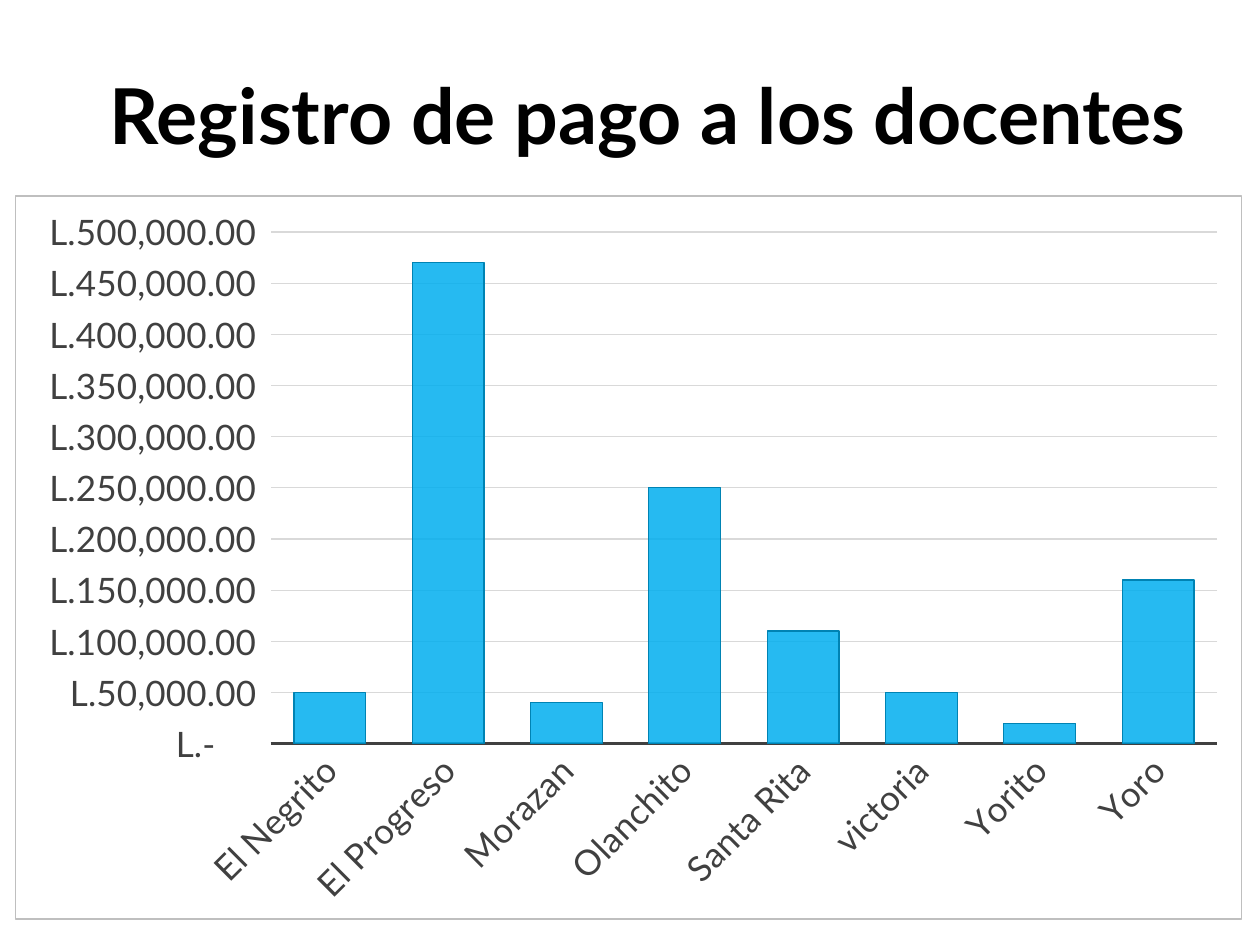
from lxml import etree
from pptx import Presentation
from pptx.chart.data import CategoryChartData
from pptx.dml.color import RGBColor
from pptx.enum import chart as ch, text as tx
from pptx.oxml import parse_xml
from pptx.oxml.ns import nsdecls, qn
from pptx.util import Pt

FONT = "Lato"
PAY = {
    "El Negrito": 50000, "El Progreso": 470000, "Morazan": 40000,
    "Olanchito": 250000, "Santa Rita": 110000, "victoria": 50000,
    "Yorito": 20000, "Yoro": 160000,
}
MONEY = r'_("L."* #,##0.00_);_("L."* \(#,##0.00\);_("L."* "-"??_);_(@_)'


def rgb(code):
    return RGBColor.from_string(code)


def style(font, size, color, bold=False):
    font.name, font.size, font.bold = FONT, Pt(size), bold
    font.color.rgb = rgb(color)


def stroke(line, color, width):
    line.color.rgb = rgb(color)
    line.width = Pt(width)


def label(slide, words, box, size=20, color="000000", bold=False, space=1.0):
    frame = slide.shapes.add_textbox(*map(Pt, box)).text_frame
    frame.word_wrap = True
    frame.vertical_anchor = tx.MSO_ANCHOR.BOTTOM
    para = frame.paragraphs[0]
    para.alignment = tx.PP_ALIGN.CENTER
    para.line_spacing = space
    run = para.add_run()
    run.text = words
    style(run.font, size, color, bold)


def frame_chart(chart, color, width):
    # The outer border goes right after the c:chart element
    root = chart._chartSpace
    root.find(qn("c:chart")).addnext(parse_xml(
        f'<c:spPr {nsdecls("c", "a")}><a:noFill/><a:ln w="{Pt(width)}">'
        f'<a:solidFill><a:srgbClr val="{color}"/></a:solidFill></a:ln></c:spPr>'))


def set_axis(axis):
    axis.major_tick_mark = axis.minor_tick_mark = ch.XL_TICK_MARK.NONE
    style(axis.tick_labels.font, 20, "404040")


def columns(slide, data, box):
    source = CategoryChartData()
    source.categories = list(data)
    source.add_series("Series 1", list(data.values()))
    kind = ch.XL_CHART_TYPE.COLUMN_CLUSTERED
    chart = slide.shapes.add_chart(kind, *map(Pt, box), source).chart
    chart.has_legend = chart.has_title = False
    style(chart.font, 20, "000000")
    frame_chart(chart, "BFBFBF", 0.75)

    # Category axis with slanted names
    cat = chart.category_axis
    set_axis(cat)
    stroke(cat.format.line, "404040", 1.5)
    body = cat._element.find(qn("c:txPr")).find(qn("a:bodyPr"))
    body.set("rot", str(-45 * 60000))
    body.set("vert", "horz")

    # Value axis in money format
    val = chart.value_axis
    set_axis(val)
    val.minimum_scale, val.maximum_scale, val.major_unit = 0, 500000, 50000
    val.format.line.fill.background()
    stroke(val.major_gridlines.format.line, "D9D9D9", 0.75)
    val.tick_labels.number_format = MONEY
    val.tick_labels.number_format_is_linked = False

    # Slightly see-through bars
    plot = chart.plots[0]
    plot.gap_width = 65
    plot.vary_by_categories = False
    bars = plot.series[0]
    bars.format.fill.solid()
    bars.format.fill.fore_color.rgb = rgb("00AEEF")
    tint = bars._element.find(qn("c:spPr")).find(qn("a:solidFill"))[0]
    etree.SubElement(tint, qn("a:alpha")).set("val", "85000")
    stroke(bars.format.line, "0083B3", 0.75)


def main():
    deck = Presentation()
    deck.slide_width, deck.slide_height = Pt(720), Pt(540)
    slide = deck.slides.add_slide(deck.slide_layouts[6])
    columns(slide, PAY, (8.64, 111.6, 701.28, 414))
    label(slide, "Registro de pago a los docentes", (31, 20.9, 679, 73.4),
          size=44, bold=True, space=0.8)
    deck.save("out.pptx")


if __name__ == "__main__":
    main()
